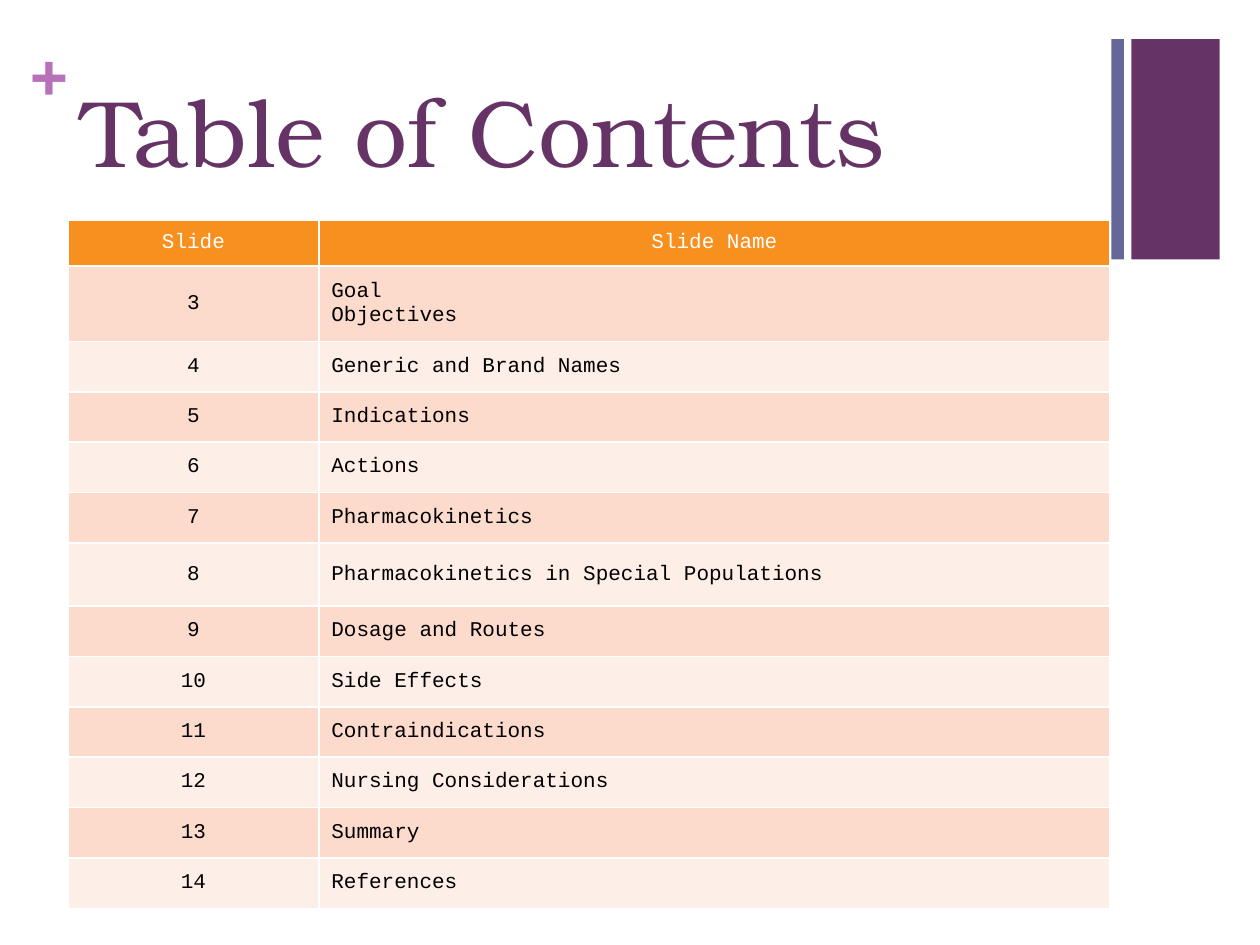
from lxml.etree import SubElement
from pptx import Presentation
from pptx.dml.color import RGBColor
from pptx.enum.shapes import MSO_SHAPE
from pptx.enum.text import MSO_ANCHOR, PP_ALIGN
from pptx.oxml.ns import qn
from pptx.util import Pt

PX = 9144  # EMU; 100 px to the inch

PURPLE = RGBColor(0x66, 0x33, 0x66)
SLATE = RGBColor(0x66, 0x66, 0x99)
ORCHID = RGBColor(0xB8, 0x70, 0xB8)
ORANGE = RGBColor(0xF7, 0x90, 0x1E)
PEACH = RGBColor(0xFC, 0xDB, 0xCD)
CREAM = RGBColor(0xFD, 0xEE, 0xE8)
BLACK = RGBColor(0, 0, 0)
WHITE = RGBColor(0xFF, 0xFF, 0xFF)

SERIF, MONO = "TeX Gyre Bonum", "Courier New"

TITLE = "Table of Contents"
HEADER = ("Slide", "Slide Name")
FIRST_SLIDE = 3
NAMES = [
    "Goal\nObjectives",
    "Generic and Brand Names",
    "Indications",
    "Actions",
    "Pharmacokinetics",
    "Pharmacokinetics in Special Populations",
    "Dosage and Routes",
    "Side Effects",
    "Contraindications",
    "Nursing Considerations",
    "Summary",
    "References",
]
BARS = [((898, 31, 70, 175), PURPLE), ((882, 31, 10, 175), SLATE)]
TABLE_LEFT, TABLE_TOP = 54, 175
COLUMN_WIDTHS = (199, 628)
HEADER_HEIGHT, ROW_HEIGHT = 36, 40
TALL_ROWS = {1: 60, 6: 50}


def emu(box):
    return [v * PX for v in box]


def style_text(tf, font, size, color, align=PP_ALIGN.LEFT, bold=False):
    for p in tf.paragraphs:
        p.alignment = align
        for r in p.runs:
            r.font.name, r.font.size, r.font.bold = font, Pt(size), bold
            r.font.color.rgb = color


def add_bar(slide, box, color):
    sp = slide.shapes.add_shape(MSO_SHAPE.RECTANGLE, *emu(box))
    sp.shadow.inherit = False
    sp.fill.solid()
    sp.fill.fore_color.rgb = color
    sp.line.fill.background()


def add_text(slide, box, text, size, color, bold=False, inset=True):
    tf = slide.shapes.add_textbox(*emu(box)).text_frame
    tf.word_wrap = True
    if not inset:
        tf.margin_left = tf.margin_top = tf.margin_right = tf.margin_bottom = 0
    tf.text = text
    style_text(tf, SERIF, size, color, bold=bold)


def add_borders(cell, color, width):
    tc_pr = cell._tc.get_or_add_tcPr()
    for side in ("a:lnL", "a:lnR", "a:lnT", "a:lnB"):
        ln = SubElement(tc_pr, qn(side), w=str(Pt(width)))
        SubElement(SubElement(ln, qn("a:solidFill")), qn("a:srgbClr"), val=str(color))


def fill_cell(cell, text, fill, color, align):
    cell.text = text
    cell.vertical_anchor = MSO_ANCHOR.MIDDLE
    style_text(cell.text_frame, MONO, 12, color, align)
    add_borders(cell, WHITE, 1)
    cell.fill.solid()
    cell.fill.fore_color.rgb = fill


def add_contents_table(slide):
    rows = [HEADER] + [(str(n), name) for n, name in enumerate(NAMES, FIRST_SLIDE)]
    heights = [HEADER_HEIGHT] + [TALL_ROWS.get(i, ROW_HEIGHT) for i in range(1, len(rows))]
    box = (TABLE_LEFT, TABLE_TOP, sum(COLUMN_WIDTHS), sum(heights))
    table = slide.shapes.add_table(len(rows), len(HEADER), *emu(box)).table
    for column, width in zip(table.columns, COLUMN_WIDTHS):
        column.width = width * PX
    for i, (row, height) in enumerate(zip(rows, heights)):
        table.rows[i].height = height * PX
        fill = ORANGE if i == 0 else PEACH if i % 2 else CREAM
        for j, text in enumerate(row):
            centred = i == 0 or j == 0
            fill_cell(table.cell(i, j), text, fill, WHITE if i == 0 else BLACK,
                      PP_ALIGN.CENTER if centred else PP_ALIGN.JUSTIFY)


def main():
    prs = Presentation()
    prs.slide_width, prs.slide_height = 1000 * PX, 750 * PX
    s = prs.slides.add_slide(prs.slide_layouts[6])
    for box, color in BARS:
        add_bar(s, box, color)
    add_text(s, (24, 25, 29, 61), "+", 36, ORCHID, bold=True, inset=False)
    add_text(s, (55, 53, 826, 122), TITLE, 54, PURPLE)
    add_contents_table(s)
    prs.save("out.pptx")


if __name__ == "__main__":
    main()
